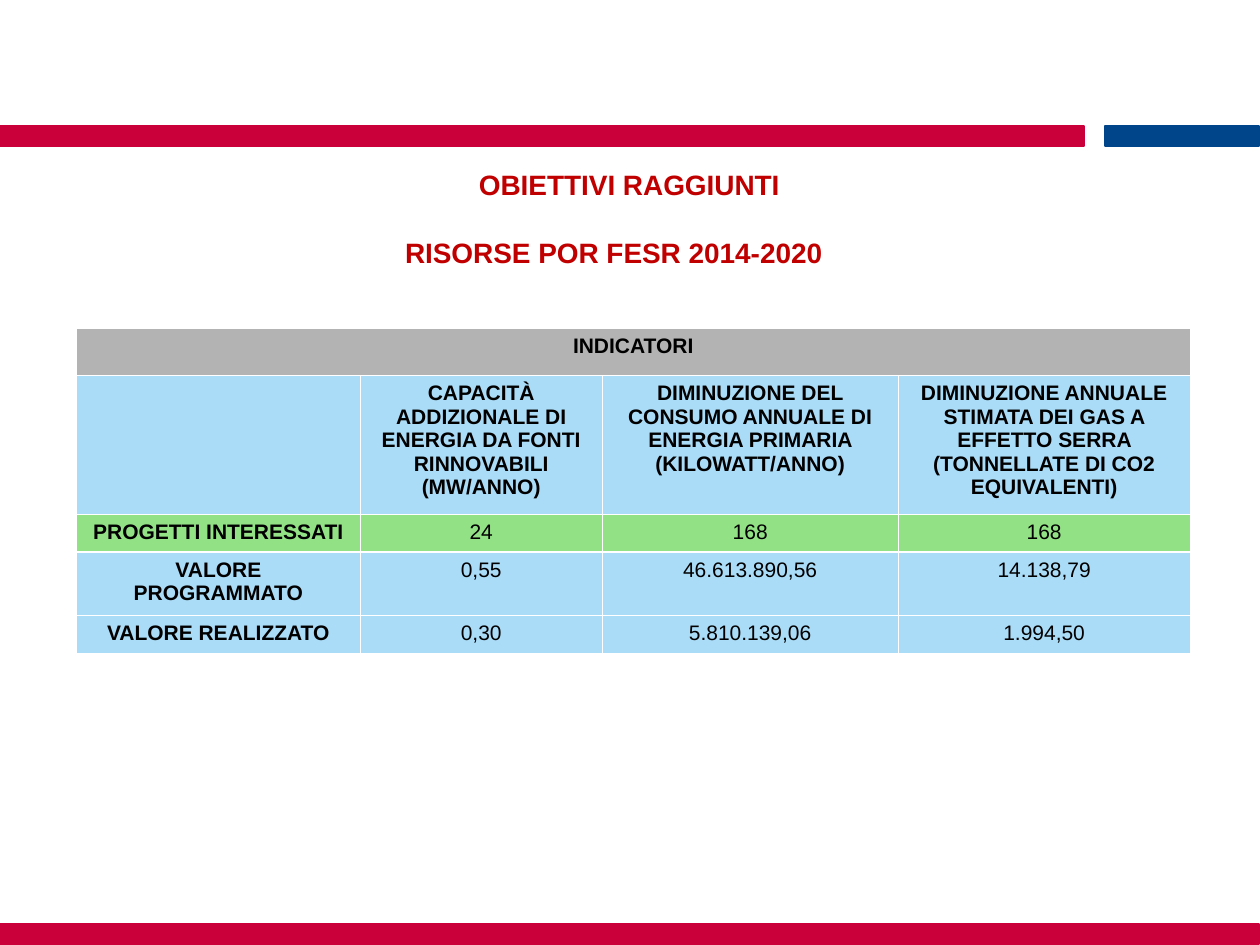
from dataclasses import dataclass

from lxml import etree
from pptx import Presentation
from pptx.dml.color import RGBColor
from pptx.enum.shapes import MSO_SHAPE
from pptx.enum.text import MSO_ANCHOR, PP_ALIGN
from pptx.oxml.ns import qn
from pptx.util import Pt

RECTANGLE = MSO_SHAPE.RECTANGLE
CENTER = PP_ALIGN.CENTER
TOP = MSO_ANCHOR.TOP


@dataclass(frozen=True)
class Theme:
    font: str = "Arial"
    red: str = "C90039"
    blue: str = "004589"
    title: str = "C00000"
    text: str = "000000"
    border: str = "FFFFFF"
    gray: str = "B3B3B3"
    sky: str = "AADCF7"
    green: str = "92E285"
    title_size: float = 16
    table_size: float = 12
    border_width: float = 0.06


def apply_format(target, values):
    for name, value in values.items():
        setattr(target, name, value)


class SlideBuilder:
    def __init__(self, slide, theme):
        self.slide = slide
        self.theme = theme

    def add_centered_run(self, paragraph, text, size, color, bold):
        paragraph.alignment = CENTER
        run = paragraph.add_run()
        run.text = text
        apply_format(run.font, {"name": self.theme.font, "size": Pt(size), "bold": bold})
        run.font.color.rgb = RGBColor.from_string(color)

    def bar(self, left, top, width, height, color):
        shape = self.slide.shapes.add_shape(RECTANGLE, Pt(left), Pt(top), Pt(width), Pt(height))
        shape.shadow.inherit = False
        shape.fill.solid()
        shape.fill.fore_color.rgb = RGBColor.from_string(color)
        shape.line.color.rgb = RGBColor.from_string(color)
        shape.line.width = Pt(1)

    def title(self, left, top, width, height, lines, gap, shift):
        """Centre the lines, with those after the first set to the left by half of shift."""
        frame = self.slide.shapes.add_textbox(Pt(left), Pt(top), Pt(width), Pt(height)).text_frame
        apply_format(frame, {
            "word_wrap": True, "vertical_anchor": TOP,
            "margin_left": Pt(7.2), "margin_right": Pt(7.2 + shift),
            "margin_top": Pt(3.6), "margin_bottom": Pt(3.6),
        })
        for index, text in enumerate(lines):
            paragraph = frame.add_paragraph() if index else frame.paragraphs[0]
            if index:
                paragraph.space_before = Pt(gap)
            else:
                properties = paragraph._p.get_or_add_pPr()
                properties.set("marL", str(Pt(shift)))
                properties.set("indent", "0")
            self.add_centered_run(paragraph, text, self.theme.title_size, self.theme.title, True)

    def borders(self, cell, sides):
        properties = cell._tc.get_or_add_tcPr()
        for side in sides:
            line = etree.SubElement(properties, qn(f"a:ln{side}"), w=str(Pt(self.theme.border_width)))
            fill = etree.SubElement(line, qn("a:solidFill"))
            etree.SubElement(fill, qn("a:srgbClr"), val=self.theme.border)

    def table(self, left, top, column_widths, row_heights, rows, fills, sides):
        """Add a table whose first row spans all columns; headings are bold."""
        table = self.slide.shapes.add_table(
            len(rows), len(column_widths), Pt(left), Pt(top),
            Pt(sum(column_widths)), Pt(sum(row_heights))).table
        apply_format(table, {"first_row": False, "horz_banding": False})
        for column, width in zip(table.columns, column_widths):
            column.width = Pt(width)
        for row, height in zip(table.rows, row_heights):
            row.height = Pt(height)
        table.cell(0, 0).merge(table.cell(0, len(column_widths) - 1))
        for row_index, texts in enumerate(rows):
            for column_index, cell in enumerate(table.rows[row_index].cells):
                self.borders(cell, sides[row_index])
                cell.fill.solid()
                cell.fill.fore_color.rgb = RGBColor.from_string(fills[row_index])
                if column_index < len(texts) and texts[column_index]:
                    bold = row_index < 2 or column_index == 0
                    self.add_centered_run(cell.text_frame.paragraphs[0], texts[column_index],
                                          self.theme.table_size, self.theme.text, bold)


INDICATORS = [
    ["INDICATORI"],
    ["",
     "CAPACITÀ ADDIZIONALE DI ENERGIA DA FONTI RINNOVABILI (MW/ANNO)",
     "DIMINUZIONE DEL CONSUMO ANNUALE DI ENERGIA PRIMARIA (KILOWATT/ANNO)",
     "DIMINUZIONE ANNUALE STIMATA DEI GAS A EFFETTO SERRA (TONNELLATE DI CO2 EQUIVALENTI)"],
    ["PROGETTI INTERESSATI", "24", "168", "168"],
    ["VALORE PROGRAMMATO", "0,55", "46.613.890,56", "14.138,79"],
    ["VALORE REALIZZATO", "0,30", "5.810.139,06", "1.994,50"],
]


def main():
    presentation = Presentation()
    presentation.slide_width = Pt(720)
    presentation.slide_height = Pt(540)
    theme = Theme()
    builder = SlideBuilder(presentation.slides.add_slide(presentation.slide_layouts[6]), theme)

    builder.bar(0, 72, 619.6, 11.5, theme.red)
    builder.bar(0, 528, 719.5, 11.5, theme.red)
    builder.bar(631.5, 72, 88, 11.5, theme.blue)
    builder.title(25.2, 92.2, 669, 64.8,
                  ["OBIETTIVI RAGGIUNTI", "RISORSE POR FESR 2014-2020"], gap=19.6, shift=17.8)
    builder.table(
        43.7, 187.6, [162.2, 138.2, 169.2, 166.8], [27, 79, 21.6, 36, 21.6], INDICATORS,
        fills=[theme.gray, theme.sky, theme.green, theme.sky, theme.sky],
        sides=["LRT", "LRTB", "LRTB", "LRB", "LRTB"])
    presentation.save("out.pptx")


if __name__ == "__main__":
    main()
